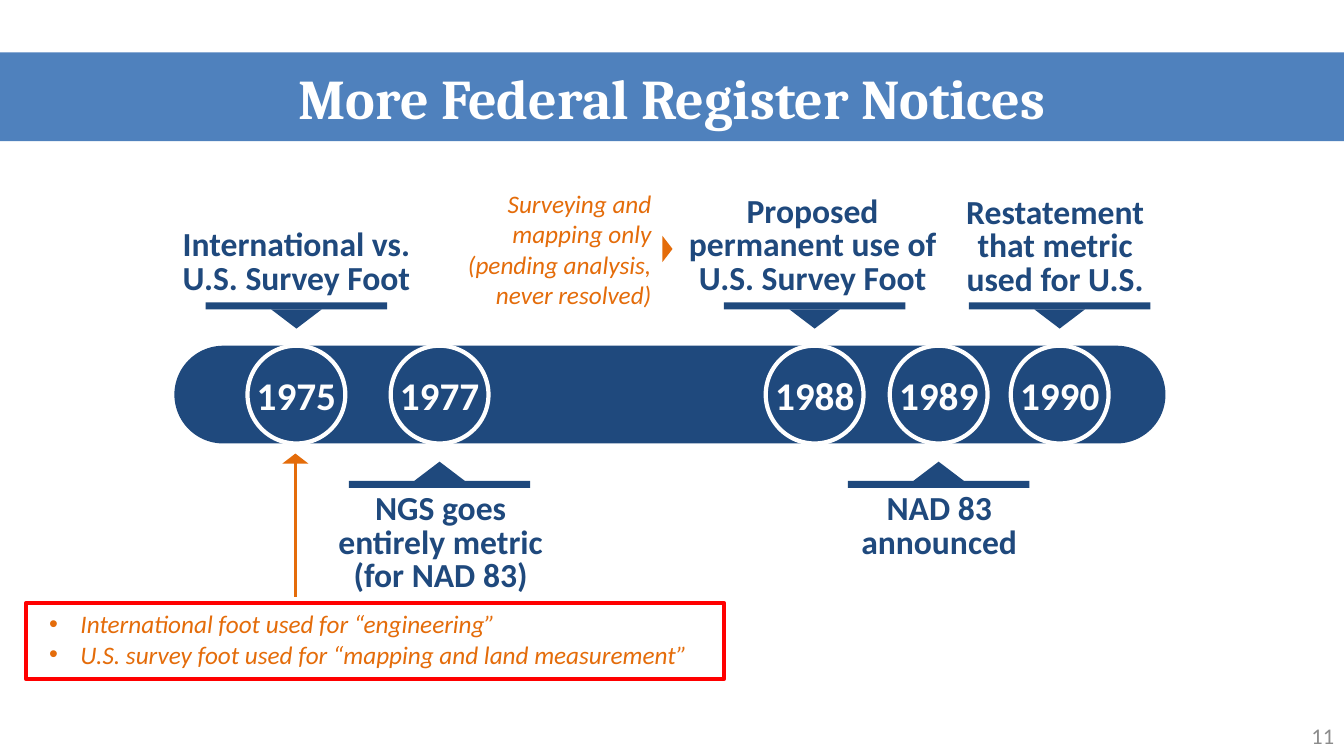
from lxml import etree
from pptx import Presentation
from pptx.dml.color import RGBColor
from pptx.enum import shapes, text
from pptx.oxml.ns import qn
from pptx.util import Inches, Pt

NAVY = RGBColor(0x1F, 0x49, 0x7D)
BLUE = RGBColor(0x4F, 0x81, 0xBD)
ORANGE = RGBColor(0xE4, 0x6C, 0x0A)
RED = RGBColor(0xFF, 0x00, 0x00)
WHITE = RGBColor(0xFF, 0xFF, 0xFF)
OFF_WHITE = RGBColor(0xFE, 0xFE, 0xFE)
GRAY = RGBColor(0x8C, 0x8C, 0x8C)
SHAPE = shapes.MSO_SHAPE
ALIGN = text.PP_ALIGN

prs = Presentation()
prs.slide_width, prs.slide_height = Inches(13.33), Inches(7.5)
s = prs.slides.add_slide(prs.slide_layouts[5])


def add_shape(kind, x, y, w, h, fill=None, line=None, rotation=0):
    sp = s.shapes.add_shape(kind, Inches(x), Inches(y), Inches(w), Inches(h))
    sp.shadow.inherit = False
    sp.rotation = rotation
    if fill is None:
        sp.fill.background()
    else:
        sp.fill.solid()
        sp.fill.fore_color.rgb = fill
    if line is None:
        sp.line.fill.background()
    else:
        sp.line.color.rgb = line
        sp.line.width = Pt(3)
    return sp


def add_text(words, x, y, w, h, size, color, align, bold=False, italic=False, spacing=None):
    sp = s.shapes.add_textbox(Inches(x), Inches(y), Inches(w), Inches(h))
    tf = sp.text_frame
    tf.word_wrap = True
    tf.text = words
    for p in tf.paragraphs:
        p.alignment = align
        p.line_spacing = spacing
        for r in p.runs:
            r.font.name = "Calibri"
            r.font.size = Pt(size)
            r.font.bold = bold
            r.font.italic = italic
            r.font.color.rgb = color
    return tf


title = s.shapes.title
title.left, title.top = Inches(0), Inches(0.52)
title.width, title.height = Inches(13.33), Inches(0.88)
title.fill.solid()
title.fill.fore_color.rgb = BLUE
tf = title.text_frame
tf.text = "More Federal Register Notices"
tf.vertical_anchor = text.MSO_ANCHOR.MIDDLE
tf.auto_size = text.MSO_AUTO_SIZE.NONE
p = tf.paragraphs[0]
p.alignment = ALIGN.CENTER
r = p.runs[0]
r.font.name = "Cambria"
r.font.size = Pt(40)
r.font.bold = True
r.font.color.rgb = WHITE

timeline = add_shape(SHAPE.ROUNDED_RECTANGLE, 1.73, 3.43, 9.83, 0.97, NAVY)
timeline.adjustments[0] = 0.5

events = [
    ("1975", 2.94, True, "International vs. U.S. Survey Foot", (1.59, 2.23, 2.7, 0.76)),
    ("1977", 4.36, False, "NGS goes entirely metric (for NAD 83)", (3.11, 4.85, 2.52, 1.52)),
    ("1988", 8.08, True, "Proposed permanent use of U.S. Survey Foot", (6.71, 1.9, 2.7, 1.1)),
    ("1989", 9.31, False, "NAD 83 announced", (8.17, 4.85, 2.29, 1.12)),
    ("1990", 10.51, True, "Restatement that metric used for U.S.", (9.33, 1.91, 2.27, 1.08)),
]
for year, center, above, label, box in events:
    add_shape(SHAPE.OVAL, center - 0.485, 3.43, 0.97, 0.97, NAVY, OFF_WHITE)
    add_text(year, center - 0.525, 3.63, 1.05, 0.57, 28, OFF_WHITE, ALIGN.CENTER, bold=True)
    pointer_top, bar_top, turn = (3.07, 3, 180) if above else (4.58, 4.77, 0)
    add_shape(SHAPE.ISOSCELES_TRIANGLE, center - 0.25, pointer_top, 0.5, 0.19, NAVY, rotation=turn)
    add_shape(SHAPE.RECTANGLE, center - 0.9, bar_top, 1.8, 0.07, NAVY)
    add_text(label, *box, 24, NAVY, ALIGN.CENTER, bold=True, spacing=Pt(24))

add_text("Surveying and mapping only (pending analysis, never resolved)",
         4.52, 1.82, 2.04, 1.31, 18, ORANGE, ALIGN.RIGHT, italic=True)
add_shape(SHAPE.ISOSCELES_TRIANGLE, 6.49, 2.42, 0.26, 0.1, ORANGE, rotation=90)

tf = add_text("International foot used for “engineering”\n"
              "U.S. survey foot used for “mapping and land measurement”",
              0.39, 5.99, 6.76, 0.71, 18, ORANGE, ALIGN.LEFT, italic=True)
for p in tf.paragraphs:
    pPr = p._p.get_or_add_pPr()
    pPr.set("marL", str(Inches(0.31)))
    pPr.set("indent", str(Inches(-0.31)))
    etree.SubElement(pPr, qn("a:buFont")).set("typeface", "Arial")
    etree.SubElement(pPr, qn("a:buChar")).set("char", "•")

stem = s.shapes.add_connector(shapes.MSO_CONNECTOR.STRAIGHT,
                              Inches(2.93), Inches(4.55), Inches(2.93), Inches(5.92))
stem.line.color.rgb = ORANGE
stem.line.width = Pt(2)
etree.SubElement(stem._element.spPr, qn("a:effectLst"))
add_shape(SHAPE.ISOSCELES_TRIANGLE, 2.8, 4.5, 0.26, 0.1, ORANGE)
add_shape(SHAPE.RECTANGLE, 0.26, 5.98, 6.92, 0.76, line=RED)

tf = add_text("11", 10.22, 7.1, 3.11, 0.4, 16, GRAY, ALIGN.RIGHT)
tf.vertical_anchor = text.MSO_ANCHOR.MIDDLE

prs.save("out.pptx")
